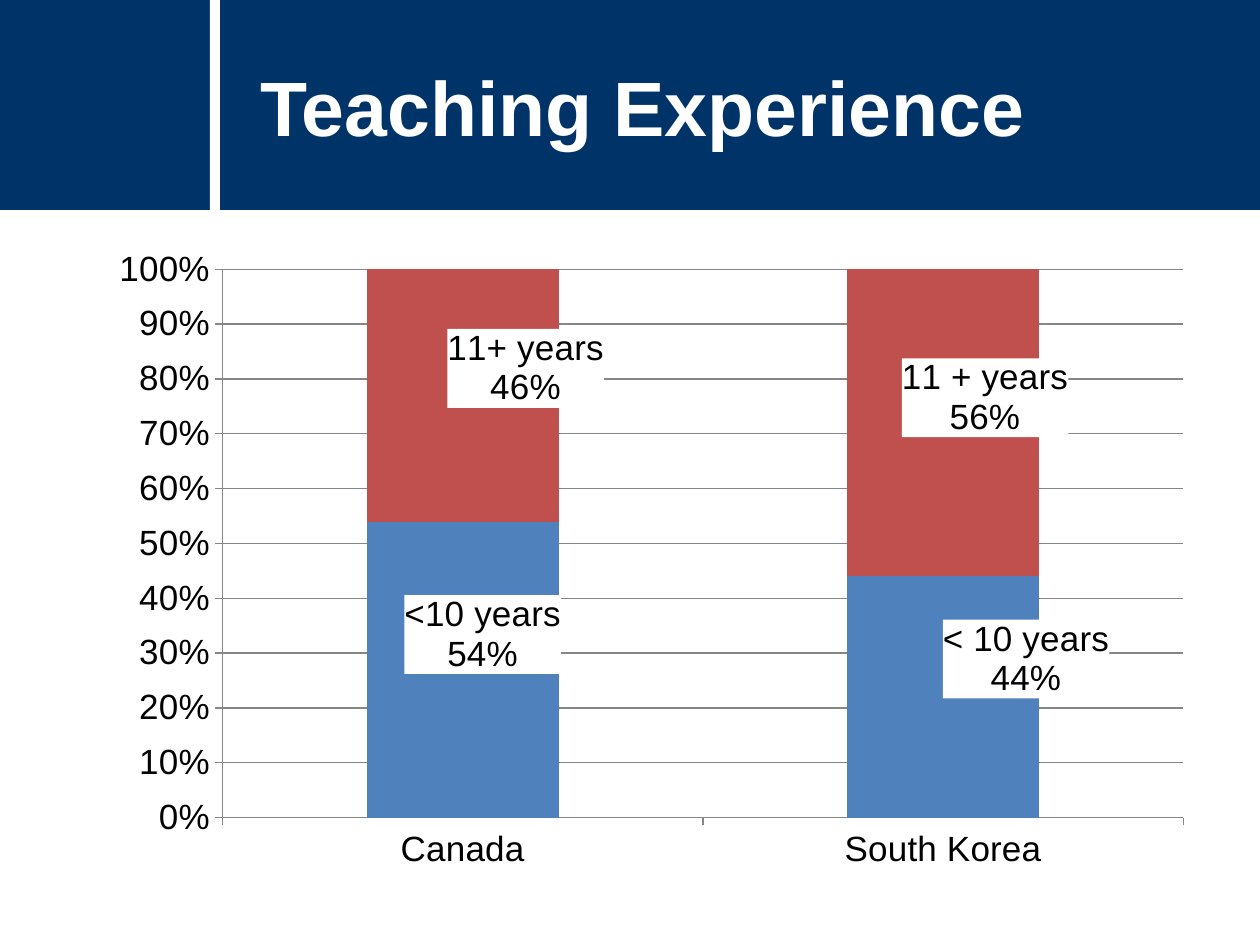
from lxml import etree
from pptx import Presentation
from pptx.chart.data import CategoryChartData
from pptx.dml.color import RGBColor
from pptx.enum.chart import XL_CHART_TYPE as CT, XL_TICK_MARK as TM
from pptx.enum.shapes import MSO_SHAPE as SHAPE
from pptx.enum.text import MSO_ANCHOR as ANCHOR
from pptx.oxml import parse_xml
from pptx.oxml.ns import nsdecls, qn
from pptx.util import Pt

PX = 914400 // 126
LEFT, TOP, WIDTH, HEIGHT = 97, 237, 1108, 645


def color(text):
    return RGBColor.from_string(text)


def layout(**parts):
    root = parse_xml(f"<c:layout {nsdecls('c')}><c:manualLayout/></c:layout>")
    for tag, val in parts.items():
        etree.SubElement(root[0], qn(f"c:{tag}")).set("val", str(val))
    return root


prs = Presentation()
prs.slide_width, prs.slide_height = 1260 * PX, 945 * PX
s = prs.slides.add_slide(prs.slide_layouts[6])

for x, w, fill in [(0, 1260, "003468"), (210, 10, "FFFFFF")]:
    sp = s.shapes.add_shape(SHAPE.RECTANGLE, x * PX, 0, w * PX, 210 * PX)
    sp.shadow.inherit = False
    sp.fill.solid()
    sp.fill.fore_color.rgb = color(fill)
    sp.line.fill.background()

tf = s.shapes.add_textbox(248 * PX, 31 * PX, 984 * PX, 149 * PX).text_frame
tf.word_wrap = True
tf.vertical_anchor = ANCHOR.MIDDLE
tf.text = "Teaching Experience"
font = tf.paragraphs[0].runs[0].font
font.name, font.size, font.bold = "Arial", Pt(44), True
font.color.rgb = color("FFFFFF")

data = CategoryChartData(number_format="0%")
data.categories = ["Canada", "South Korea"]
data.add_series("less than 10", [0.54, 0.44])
data.add_series("11 and more", [0.46, 0.56])
chart = s.shapes.add_chart(CT.COLUMN_STACKED_100, LEFT * PX, TOP * PX,
                           WIDTH * PX, HEIGHT * PX, data).chart
chart.has_legend = chart.has_title = False
chart.font.name, chart.font.size = "Arial", Pt(20)
chart.font.color.rgb = color("000000")

plot = chart.plots[0]
plot.gap_width, plot.overlap = 150, 100
plot.vary_by_categories = False
area = chart.element.find(".//" + qn("c:plotArea"))
for old in area.findall(qn("c:layout")):
    area.remove(old)
area.insert(0, layout(layoutTarget="inner", xMode="edge", yMode="edge",
                      x=round((222.5 - LEFT) / WIDTH, 4), y=round((269.3 - TOP) / HEIGHT, 4),
                      w=round(961 / WIDTH, 4), h=round(548.5 / HEIGHT, 4)))

for axis in (chart.category_axis, chart.value_axis):
    axis.major_tick_mark, axis.minor_tick_mark = TM.OUTSIDE, TM.NONE
    axis.format.line.color.rgb = color("868686")
axis.minimum_scale, axis.maximum_scale, axis.major_unit = 0, 1, 0.1
axis.has_major_gridlines = True
axis.major_gridlines.format.line.color.rgb = color("868686")
axis.tick_labels.number_format = "0%"
axis.tick_labels.number_format_is_linked = False

styles = [
    ("4F81BD", [("<10 years", "54%", 20, -35), ("< 10 years", "44%", 83, -38)]),
    ("C0504D", [("11+ years", "46%", 63, -27), ("11 + years", "56%", 42, -25)]),
]
for series, (fill, labels) in zip(plot.series, styles):
    series.format.fill.solid()
    series.format.fill.fore_color.rgb = color(fill)
    series.data_labels.show_value = True
    series.data_labels.show_series_name = True
    series.data_labels.number_format = "0%"
    series.data_labels.number_format_is_linked = False
    for i, (name, share, dx, dy) in enumerate(labels):
        tf = series.points[i].data_label.text_frame
        tf.text = f"{name}\n{share}"
        for p in tf.paragraphs:
            font = p.runs[0].font
            font.name, font.size = "Arial", Pt(20)
            font.color.rgb = color("000000")
    points = chart.element.findall(".//" + qn("c:ser"))[series.index].iter(qn("c:dLbl"))
    for point, (name, share, dx, dy) in zip(points, labels):
        tx = point.find(qn("c:tx"))
        tx.addprevious(layout(x=round(dx / WIDTH, 4), y=round(dy / HEIGHT, 4)))
        tx.addnext(parse_xml(
            f'<c:spPr {nsdecls("c", "a")}><a:solidFill><a:srgbClr val="FFFFFF"/>'
            '</a:solidFill></c:spPr>'))
        point.find(qn("c:showSerName")).set("val", "1")

prs.save("out.pptx")
